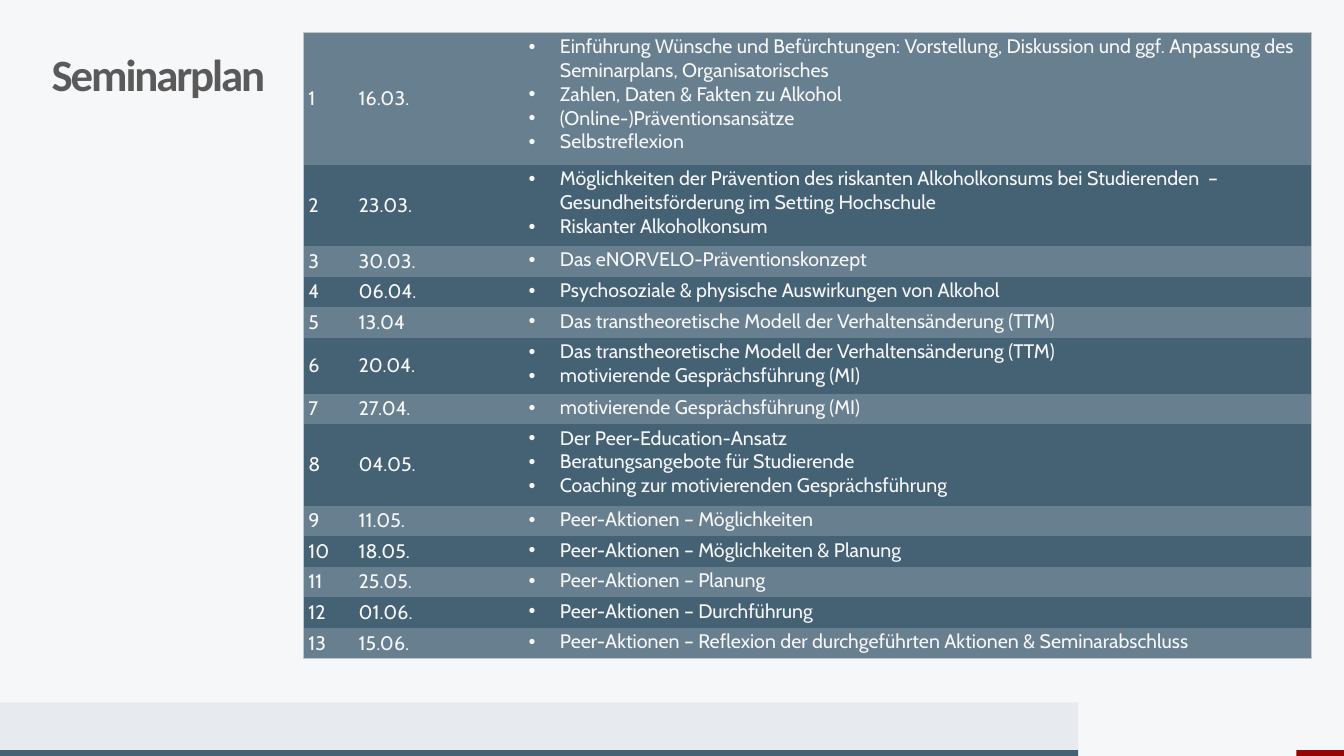
from dataclasses import dataclass

from lxml import etree
from pptx import Presentation
from pptx.dml.color import RGBColor
from pptx.enum import shapes, text
from pptx.oxml import ns
from pptx.slide import Slide
from pptx.table import _Cell
from pptx.text.text import TextFrame, _Paragraph
from pptx.util import Cm, Pt


@dataclass(frozen=True)
class Theme:
    paper: str = "F6F7F9"
    strip: str = "E7EAEF"
    dark: str = "456174"
    light: str = "687F8F"
    red: str = "950505"
    head: str = "5A5A5A"
    edge: str = "C1C5C9"
    title_font: str = "Calibri"
    body_font: str = "Cabin"
    title_size: int = 32
    body_size: int = 14


@dataclass(frozen=True)
class Bar:
    left: float
    top: float
    width: float
    height: float
    color: str


@dataclass(frozen=True)
class Session:
    date: str
    topics: tuple[str, ...]
    wraps: int = 0


THEME = Theme()
BARS = (
    Bar(0, 17.7, 27.17, 1.2, THEME.strip),
    Bar(0, 18.9, 27.17, 0.15, THEME.dark),
    Bar(32.67, 18.9, 1.2, 0.15, THEME.red),
)
MODEL = "Das transtheoretische Modell der Verhaltensänderung (TTM)"
TALK = "motivierende Gesprächsführung (MI)"
PLAN = (
    Session("16.03.", (
        "Einführung Wünsche und Befürchtungen: Vorstellung, Diskussion und ggf. "
        "Anpassung des Seminarplans, Organisatorisches",
        "Zahlen, Daten & Fakten zu Alkohol",
        "(Online-)Präventionsansätze",
        "Selbstreflexion"), wraps=1),
    Session("23.03.", (
        "Möglichkeiten der Prävention des riskanten Alkoholkonsums bei Studierenden  – \n"
        "Gesundheitsförderung im Setting Hochschule",
        "Riskanter Alkoholkonsum"), wraps=1),
    Session("30.03.", ("Das eNORVELO-Präventionskonzept",)),
    Session("06.04.", ("Psychosoziale & physische Auswirkungen von Alkohol",)),
    Session("13.04", (MODEL,)),
    Session("20.04.", (MODEL, TALK)),
    Session("27.04.", (TALK,)),
    Session("04.05.", (
        "Der Peer-Education-Ansatz",
        "Beratungsangebote für Studierende",
        "Coaching zur motivierenden Gesprächsführung")),
    Session("11.05.", ("Peer-Aktionen – Möglichkeiten",)),
    Session("18.05.", ("Peer-Aktionen – Möglichkeiten & Planung",)),
    Session("25.05.", ("Peer-Aktionen – Planung",)),
    Session("01.06.", ("Peer-Aktionen – Durchführung",)),
    Session("15.06.", (
        "Peer-Aktionen – Reflexion der durchgeführten Aktionen & Seminarabschluss",)),
)
COLS = (1.27, 4.28, 19.85)
PAD, LINE = 0.13, 0.64  # row height: padding plus a share per text line


def rgb(color: str) -> RGBColor:
    return RGBColor.from_string(color)


def draw_bar(slide: Slide, bar: Bar) -> None:
    shape = slide.shapes.add_shape(
        shapes.MSO_SHAPE.RECTANGLE, Cm(bar.left), Cm(bar.top), Cm(bar.width), Cm(bar.height))
    shape.shadow.inherit = False
    shape.fill.solid()
    shape.fill.fore_color.rgb = rgb(bar.color)
    shape.line.fill.background()


def draw_title(slide: Slide, words: str) -> None:
    title = slide.shapes.title
    title.left, title.top, title.width, title.height = Cm(1.3), Cm(1.35), Cm(31.47), Cm(1.2)
    frame: TextFrame = title.text_frame
    frame.margin_left = frame.margin_right = frame.margin_top = frame.margin_bottom = 0
    frame.vertical_anchor = text.MSO_ANCHOR.MIDDLE
    frame.auto_size = text.MSO_AUTO_SIZE.NONE
    para = frame.paragraphs[0]
    para.alignment = text.PP_ALIGN.LEFT
    para.line_spacing = 0.9
    run = para.add_run()
    run.text = words
    run.font.name, run.font.size, run.font.bold = THEME.title_font, Pt(THEME.title_size), True
    run.font.color.rgb = rgb(THEME.head)
    run.font._element.set("spc", "-150")


def set_edges(cell: _Cell, sides: str) -> None:
    """Draw the named sides (out of L, R, T, B) and clear the others."""
    props = cell._tc.get_or_add_tcPr()
    for side in "LRTB":
        line = etree.SubElement(props, ns.qn(f"a:ln{side}"), w=str(Pt(0.5)))
        if side in sides:
            fill = etree.SubElement(line, ns.qn("a:solidFill"))
            etree.SubElement(fill, ns.qn("a:srgbClr"), val=THEME.edge)
        else:
            etree.SubElement(line, ns.qn("a:noFill"))


def set_bullet(para: _Paragraph) -> None:
    props = para._p.get_or_add_pPr()
    indent = Cm(0.79)
    props.set("marL", str(indent))
    props.set("indent", str(-indent))
    font = etree.SubElement(props, ns.qn("a:buFont"))
    font.set("typeface", "Arial")
    etree.SubElement(props, ns.qn("a:buChar"), char="•")


def fill_cell(cell: _Cell, items: tuple[str, ...], color: str, sides: str, listed: bool) -> None:
    set_edges(cell, sides)
    cell.fill.solid()
    cell.fill.fore_color.rgb = rgb(color)
    cell.margin_left = cell.margin_right = Cm(0.12)
    cell.margin_top = cell.margin_bottom = Cm(0.05)
    cell.vertical_anchor = text.MSO_ANCHOR.TOP if listed else text.MSO_ANCHOR.MIDDLE
    frame = cell.text_frame
    for spot, item in enumerate(items):
        para = frame.add_paragraph() if spot else frame.paragraphs[0]
        if listed:
            set_bullet(para)
        for part, words in enumerate(item.split("\n")):
            if part:
                para.add_line_break()
            run = para.add_run()
            run.text = words
            run.font.name, run.font.size = THEME.body_font, Pt(THEME.body_size)
            run.font.color.rgb = rgb(THEME.paper)


def draw_plan(slide: Slide, plan: tuple[Session, ...]) -> None:
    highs = [PAD + LINE * (len(item.topics) + item.wraps) for item in plan]
    frame = slide.shapes.add_table(
        len(plan), len(COLS), Cm(7.65), Cm(0.82), Cm(sum(COLS)), Cm(sum(highs)))
    table = frame.table
    table.first_row = table.horz_banding = False
    for col, width in zip(table.columns, COLS):
        col.width = Cm(width)
    last = len(plan) - 1
    for num, (item, high) in enumerate(zip(plan, highs)):
        table.rows[num].height = Cm(high)
        color = THEME.dark if num % 2 else THEME.light
        ends = ("T" if num == 0 else "") + ("B" if num == last else "")
        cells = ((str(num + 1),), (item.date,), item.topics)
        for col, (items, side) in enumerate(zip(cells, ("L", "", "R"))):
            fill_cell(table.cell(num, col), items, color, ends + side, listed=col == 2)


def main() -> None:
    deck = Presentation()
    deck.slide_width, deck.slide_height = Cm(33.87), Cm(19.05)
    slide = deck.slides.add_slide(deck.slide_layouts[5])
    slide.background.fill.solid()
    slide.background.fill.fore_color.rgb = rgb(THEME.paper)
    for bar in BARS:
        draw_bar(slide, bar)
    draw_title(slide, "Seminarplan")
    draw_plan(slide, PLAN)
    deck.save("out.pptx")


if __name__ == "__main__":
    main()
